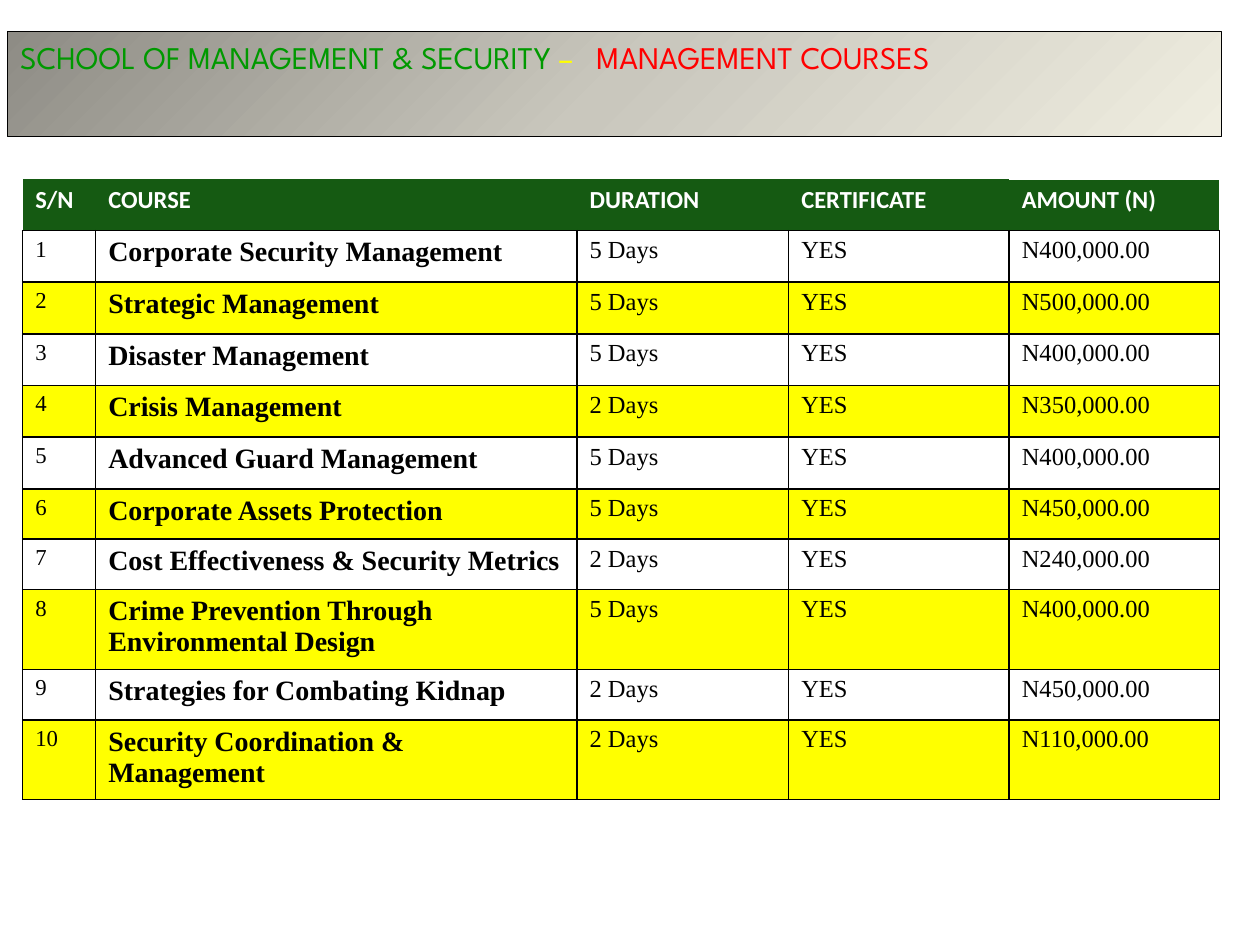
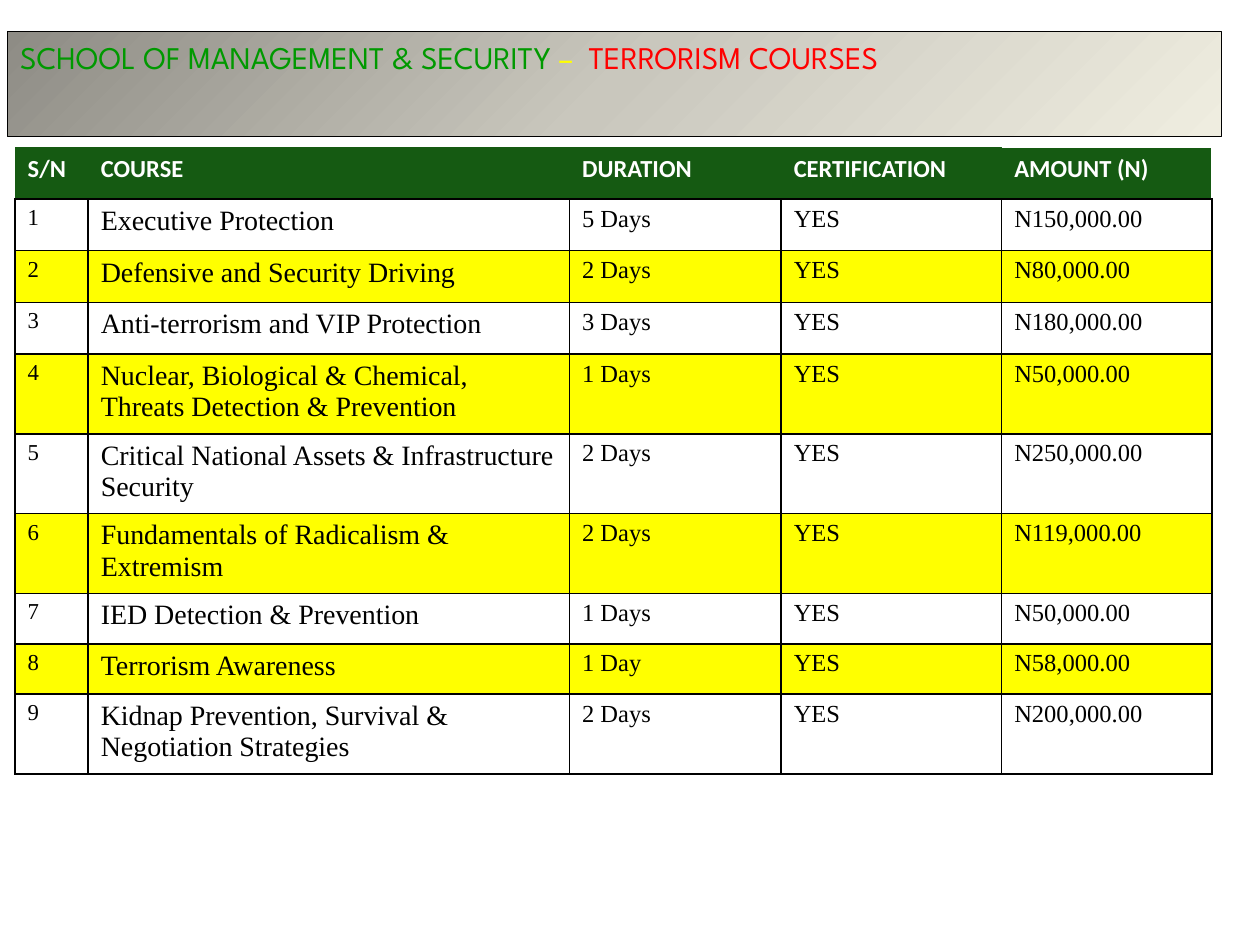
from copy import deepcopy
from dataclasses import dataclass

from lxml.etree import SubElement
from pptx import Presentation
from pptx.dml.color import RGBColor
from pptx.enum.text import MSO_ANCHOR as Anchor, MSO_AUTO_SIZE as AutoSize, PP_ALIGN as Align
from pptx.oxml.ns import qn
from pptx.util import Inches, Pt

WIDTH, HEIGHT = Inches(10), Inches(7.5)
GRID_COLS, GRID_ROWS = 1000, 750

BLACK, WHITE = "000000", "FFFFFF"
GREEN, YELLOW, RED = "009900", "FFFF00", "FF0000"
HEADER_GREEN = "155A12"
BAND_STOPS = ((0, "8E8C85"), (0.5, "C9C7BD"), (1, "EFEDE0"))
NO_STYLE = "{2D5ABB26-0587-4C30-8999-92F81FD0307C}"
COL_WIDTHS = (58, 382, 168, 175, 167)
SIDES = "LRTB"


@dataclass(frozen=True)
class Box:
    col: int
    row: int
    cols: int
    rows: int

    def emu(self) -> tuple:
        return across(self.col), down(self.row), across(self.cols), down(self.rows)


@dataclass(frozen=True)
class Course:
    name: str
    duration: str
    amount: int


@dataclass(frozen=True)
class CourseSlide:
    topic: str
    dash_spacing: int
    certificate_head: str
    bold_names: bool
    col: int
    row: int
    courses: tuple


BAND = Box(6, 25, 963, 40)

COURSE_SLIDES = (
    CourseSlide("MANAGEMENT COURSES", 450, "CERTIFICATE", True, 18, 142, (
        Course("Corporate Security Management", "5 Days", 400000),
        Course("Strategic Management", "5 Days", 500000),
        Course("Disaster Management", "5 Days", 400000),
        Course("Crisis Management", "2 Days", 350000),
        Course("Advanced Guard Management", "5 Days", 400000),
        Course("Corporate Assets Protection", "5 Days", 450000),
        Course("Cost Effectiveness & Security Metrics", "2 Days", 240000),
        Course("Crime Prevention Through Environmental Design", "5 Days", 400000),
        Course("Strategies for Combating Kidnap", "2 Days", 450000),
        Course("Security Coordination & Management", "2 Days", 110000),
    )),
    CourseSlide("TERRORISM COURSES", 225, "CERTIFICATION", False, 12, 117, (
        Course("Executive Protection", "5 Days", 150000),
        Course("Defensive and Security Driving", "2 Days", 80000),
        Course("Anti-terrorism and VIP Protection", "3 Days", 180000),
        Course("Nuclear, Biological & Chemical, Threats Detection & Prevention", "1 Days", 50000),
        Course("Critical National Assets & Infrastructure Security", "2 Days", 250000),
        Course("Fundamentals of Radicalism & Extremism", "2 Days", 119000),
        Course("IED Detection & Prevention", "1 Days", 50000),
        Course("Terrorism Awareness", "1 Day", 58000),
        Course("Kidnap Prevention, Survival & Negotiation Strategies", "2 Days", 200000),
    )),
)


def across(cols: int) -> int:
    return WIDTH * cols // GRID_COLS


def down(rows: int) -> int:
    return HEIGHT * rows // GRID_ROWS


def rgb(value: str) -> RGBColor:
    return RGBColor.from_string(value)


def set_all(target, values: dict) -> None:
    for name, value in values.items():
        setattr(target, name, value)


def add_run(p, text: str, color: str, **font):
    r = p.add_run()
    r.text = text
    set_all(r.font, font)
    r.font.color.rgb = rgb(color)
    return r


def draw_band(slide, page: CourseSlide) -> None:
    sp = slide.shapes.title
    set_all(sp, dict(zip(("left", "top", "width", "height"), BAND.emu())))
    sp.fill.gradient()
    sp.fill.gradient_angle = 315
    stops = sp.element.spPr.find(".//" + qn("a:gsLst"))
    stops.append(deepcopy(stops[0]))
    for stop, (position, color) in zip(sp.fill.gradient_stops, BAND_STOPS):
        stop.position = position
        stop.color.rgb = rgb(color)
    sp.line.color.rgb = rgb(BLACK)
    sp.line.width = Pt(0.25)

    tf = sp.text_frame
    set_all(tf, {"word_wrap": True, "vertical_anchor": Anchor.TOP,
                 "auto_size": AutoSize.SHAPE_TO_FIT_TEXT})
    p = tf.paragraphs[0]
    p.alignment = Align.LEFT
    font = {"name": "League Spartan", "size": Pt(18)}
    add_run(p, "SCHOOL OF MANAGEMENT & SECURITY ", GREEN, **font)
    dash = add_run(p, "– ", YELLOW, **font)
    dash.font._element.set("spc", str(page.dash_spacing))
    add_run(p, page.topic, RED, **font)


def draw_borders(cell, borders: dict) -> None:
    tc_pr = cell._tc.get_or_add_tcPr()
    for side in SIDES:
        if side in borders:
            ln = SubElement(tc_pr, qn(f"a:ln{side}"), w=str(Pt(1)))
            fill = SubElement(ln, qn("a:solidFill"))
            SubElement(fill, qn("a:srgbClr"), val=borders[side])


def draw_cell(cell, text: str, color: str, fill: str, borders: dict, font: dict) -> None:
    add_run(cell.text_frame.paragraphs[0], text, color, **font)
    draw_borders(cell, borders)
    if fill:
        cell.fill.solid()
        cell.fill.fore_color.rgb = rgb(fill)
    else:
        cell.fill.background()


def draw_table(slide, page: CourseSlide) -> None:
    heights = [41 if i < 6 else 40 for i in range(len(page.courses) + 1)]
    box = Box(page.col, page.row, sum(COL_WIDTHS), sum(heights))
    table = slide.shapes.add_table(len(heights), len(COL_WIDTHS), *box.emu()).table
    table.horz_banding = False
    table._tbl.tblPr.find(qn("a:tableStyleId")).text = NO_STYLE
    for column, width in zip(table.columns, COL_WIDTHS):
        column.width = across(width)
    for row, height in zip(table.rows, heights):
        row.height = down(height)

    heads = ("S/N", "COURSE", "DURATION", page.certificate_head, "AMOUNT (N)")
    head_font = {"name": "Calibri", "size": Pt(14), "bold": True}
    for i, head in enumerate(heads):
        borders = {"B": BLACK}
        if i == len(heads) - 1:
            borders |= {"T": WHITE, "R": WHITE}
        draw_cell(table.cell(0, i), head, WHITE, HEADER_GREEN, borders, head_font)

    grid = dict.fromkeys(SIDES, BLACK)
    sizes = (13, 16, 14, 14, 14)
    for n, course in enumerate(page.courses, 1):
        values = (str(n), course.name, course.duration, "YES", f"N{course.amount:,}.00")
        fill = YELLOW if n % 2 == 0 else ""
        for i, (value, size) in enumerate(zip(values, sizes)):
            font = {"name": "Times New Roman", "size": Pt(size),
                    "bold": page.bold_names and i == 1}
            draw_cell(table.cell(n, i), value, BLACK, fill, grid, font)


def main() -> None:
    prs = Presentation()
    set_all(prs, {"slide_width": WIDTH, "slide_height": HEIGHT})
    for page in COURSE_SLIDES:
        slide = prs.slides.add_slide(prs.slide_layouts[5])
        draw_band(slide, page)
        draw_table(slide, page)
    prs.save("out.pptx")


if __name__ == "__main__":
    main()
